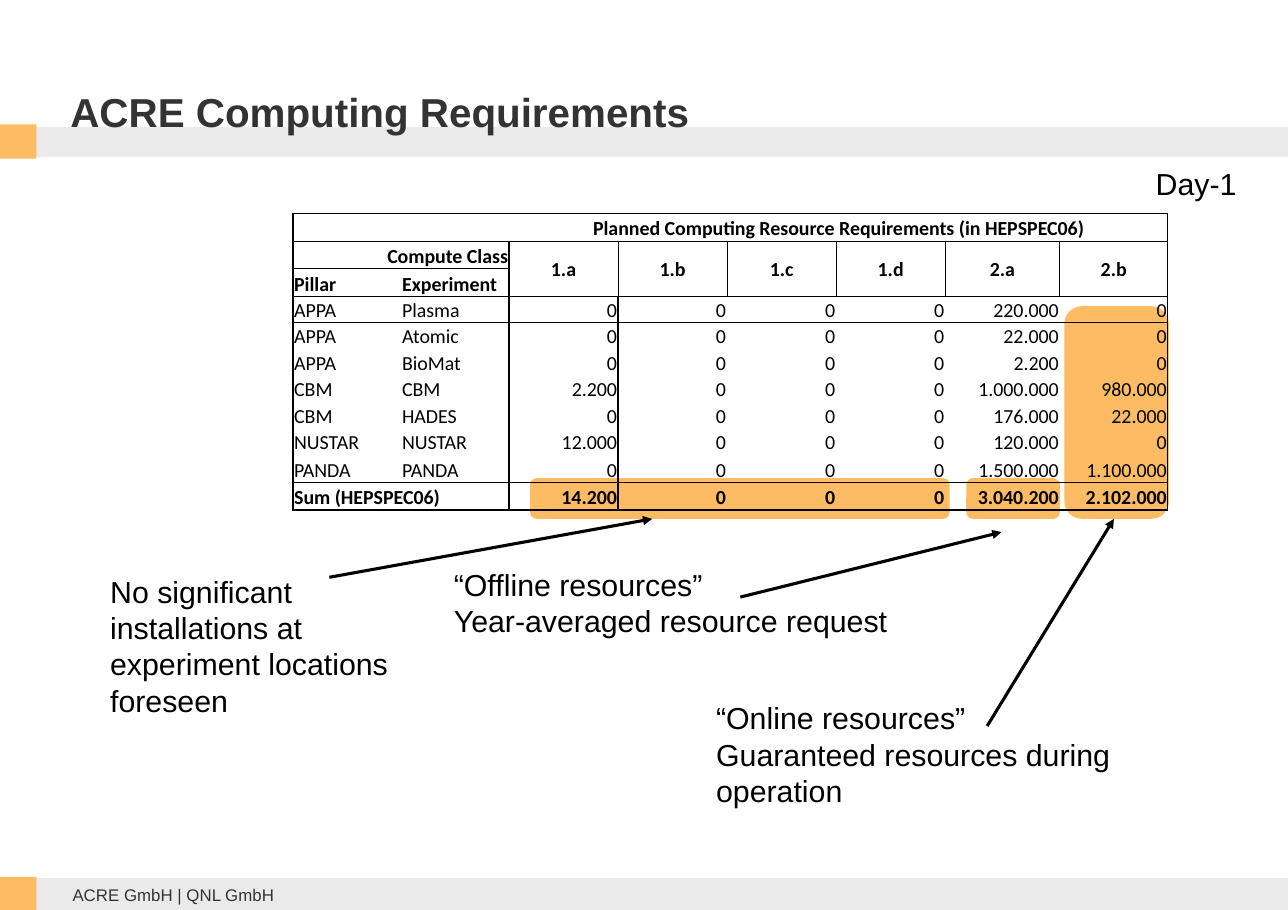
from lxml.etree import SubElement
from pptx import Presentation
from pptx.dml.color import RGBColor
from pptx.enum.shapes import MSO_CONNECTOR as Connector, MSO_SHAPE as Shape
from pptx.enum.text import MSO_ANCHOR as Anchor, PP_ALIGN as Align
from pptx.oxml.ns import qn
from pptx.util import Inches, Pt

BLACK = RGBColor(0x00, 0x00, 0x00)
CHARCOAL = RGBColor(0x33, 0x33, 0x33)
LIGHT_GRAY = RGBColor(0xEA, 0xEA, 0xEA)
ORANGE = RGBColor(0xFD, 0xBB, 0x63)
PLAIN_TABLE_STYLE = "{2D5ABB26-0587-4C30-8999-92F81FD0307C}"

TITLE = {"name": "Arial", "size": Pt(26.4), "bold": True}
FOOTER = {"name": "Arial", "size": Pt(11)}
NOTE = {"name": "Arial", "size": Pt(19.8)}
CELL = {"name": "Calibri", "size": Pt(13)}
NOTE_MARGINS = (0.11, 0.06)

COLUMN_WIDTHS = [0.98, 0.98] + [0.99] * 4 + [1.04, 0.98]
ROW_HEIGHTS = [0.25] * 3 + [0.24] * 6 + [0.25] * 2 + [0.37]
HEADER_ROWS, SUM_ROW, LABEL_COLUMNS = 3, 10, 2
REQUIREMENTS = [
    ["", "", "Planned Computing Resource Requirements (in HEPSPEC06)"] + [""] * 5,
    ["Compute Class", "", "1.a", "1.b", "1.c", "1.d", "2.a", "2.b"],
    ["Pillar", "Experiment"] + [""] * 6,
    ["APPA", "Plasma", "0", "0", "0", "0", "220.000", "0"],
    ["APPA", "Atomic", "0", "0", "0", "0", "22.000", "0"],
    ["APPA", "BioMat", "0", "0", "0", "0", "2.200", "0"],
    ["CBM", "CBM", "2.200", "0", "0", "0", "1.000.000", "980.000"],
    ["CBM", "HADES", "0", "0", "0", "0", "176.000", "22.000"],
    ["NUSTAR", "NUSTAR", "12.000", "0", "0", "0", "120.000", "0"],
    ["PANDA", "PANDA", "0", "0", "0", "0", "1.500.000", "1.100.000"],
    ["Sum (HEPSPEC06)", "", "14.200", "0", "0", "0", "3.040.200", "2.102.000"],
    [""] * 8,
]
# First and last cell of each merged range, as (row, column)
MERGES = [((0, 2), (0, 7)), ((1, 0), (1, 1)), ((10, 0), (10, 1))]
MERGES += [((1, column), (2, column)) for column in range(2, 8)]


def vertical_rule(edge, row):
    """Width in points of the rule at a column edge."""
    if row > SUM_ROW:
        return 0
    if edge in (0, len(COLUMN_WIDTHS)) or (edge == LABEL_COLUMNS and row > 0):
        return 1
    return 0.5 if edge > LABEL_COLUMNS and row in (1, 2) else 0


def horizontal_rule(edge, column):
    """Width in points of the rule at a row edge."""
    full = edge in (0, 1, HEADER_ROWS, SUM_ROW, SUM_ROW + 1)
    return 1 if full or (edge == 2 and column < LABEL_COLUMNS) else 0


def cell_alignment(row, column):
    if row < HEADER_ROWS and column >= LABEL_COLUMNS:
        return Align.CENTER
    if column >= LABEL_COLUMNS or row == 1:
        return Align.RIGHT
    return Align.LEFT


class SlideBuilder:
    def __init__(self, page):
        self.page = page

    def style(self, paragraph, formats, color):
        for span in paragraph.runs:
            for name, value in formats.items():
                setattr(span.font, name, value)
            span.font.color.rgb = color

    def block(self, left, top, width, height, color, kind=Shape.RECTANGLE):
        shape = self.page.shapes.add_shape(
            kind, Inches(left), Inches(top), Inches(width), Inches(height))
        shape.shadow.inherit = False
        shape.fill.solid()
        shape.fill.fore_color.rgb = color
        shape.line.fill.background()

    def text(self, left, top, width, height, words, formats, color=BLACK,
             anchor=Anchor.TOP, margins=(0.1, 0.05), wrap=True):
        box = self.page.shapes.add_textbox(
            Inches(left), Inches(top), Inches(width), Inches(height))
        frame = box.text_frame
        side, end = (Inches(margin) for margin in margins)
        settings = {"word_wrap": wrap, "vertical_anchor": anchor,
                    "margin_left": side, "margin_right": side,
                    "margin_top": end, "margin_bottom": end, "text": words}
        for name, value in settings.items():
            setattr(frame, name, value)
        for para in frame.paragraphs:
            self.style(para, formats, color)

    def line(self, start, finish, color, width, arrow=False):
        points = [Inches(value) for value in start + finish]
        connector = self.page.shapes.add_connector(Connector.STRAIGHT, *points)
        connector.line.color.rgb = color
        connector.line.width = Pt(width)
        if arrow:
            SubElement(connector.line._get_or_add_ln(), qn("a:tailEnd"), type="triangle")
        SubElement(connector._element.spPr, qn("a:effectLst"))

    def border(self, cell, side, width):
        rule = SubElement(cell._tc.get_or_add_tcPr(), qn(f"a:ln{side}"),
                          w=str(int(Pt(width))))
        fill = SubElement(rule, qn("a:solidFill"))
        SubElement(fill, qn("a:srgbClr"), val=str(BLACK))

    def cell(self, cell, row, column, words):
        header = row in (1, 2) and column >= LABEL_COLUMNS
        settings = {"margin_left": Inches(0.01), "margin_right": Inches(0.01),
                    "margin_top": Inches(0.01), "margin_bottom": 0,
                    "vertical_anchor": Anchor.MIDDLE if header else Anchor.BOTTOM}
        for name, value in settings.items():
            setattr(cell, name, value)
        para = cell.text_frame.paragraphs[0]
        para.alignment = cell_alignment(row, column)
        if words:
            para.add_run().text = words
            bold = row < HEADER_ROWS or row == SUM_ROW
            self.style(para, {**CELL, "bold": bold}, BLACK)
        else:
            SubElement(para._p, qn("a:endParaRPr"), sz="1300")
        rules = {"L": vertical_rule(column, row),
                 "R": vertical_rule(column + cell.span_width, row),
                 "T": horizontal_rule(row, column),
                 "B": horizontal_rule(row + cell.span_height, column)}
        for side, width in rules.items():
            if width:
                self.border(cell, side, width)
        cell.fill.background()

    def table(self, left, top, rows):
        frame = self.page.shapes.add_table(
            len(rows), len(COLUMN_WIDTHS), Inches(left), Inches(top),
            Inches(sum(COLUMN_WIDTHS)), Inches(sum(ROW_HEIGHTS)))
        table = frame.table
        table.first_row = table.horz_banding = False
        table._tbl.tblPr.find(qn("a:tableStyleId")).text = PLAIN_TABLE_STYLE
        for column, width in zip(table.columns, COLUMN_WIDTHS):
            column.width = Inches(width)
        for row, height in zip(table.rows, ROW_HEIGHTS):
            row.height = Inches(height)
        for first, last in MERGES:
            table.cell(*first).merge(table.cell(*last))
        for row, values in enumerate(rows):
            for column, words in enumerate(values):
                self.cell(table.cell(row, column), row, column, words)


def main():
    deck = Presentation()
    deck.slide_width, deck.slide_height = Inches(11.69), Inches(8.26)
    slide = SlideBuilder(deck.slides.add_slide(deck.slide_layouts[6]))

    # Title band and footer
    slide.block(0, 7.97, 11.69, 0.31, LIGHT_GRAY)
    slide.line((0, 1.29), (11.69, 1.29), LIGHT_GRAY, 20)
    slide.text(0.56, 7.98, 2.59, 0.29, "ACRE GmbH | QNL GmbH", FOOTER, CHARCOAL,
               Anchor.MIDDLE)
    for top in (1.13, 7.96):
        slide.block(0, top, 0.33, 0.31, ORANGE)

    # Highlights behind the table
    for area in ((9.66, 2.78, 0.95, 1.93), (8.77, 4.34, 0.85, 0.37),
                 (4.81, 4.34, 3.81, 0.37)):
        slide.block(*area, ORANGE, Shape.ROUNDED_RECTANGLE)

    slide.text(0.54, 0.33, 7.14, 0.95, "ACRE Computing Requirements", TITLE,
               CHARCOAL, Anchor.BOTTOM)
    slide.table(2.66, 1.94, REQUIREMENTS)

    # Notes; \v breaks a line inside a paragraph
    notes = [
        (4.01, 5.08, 4.5, 0.78, "“Offline resources”\nYear-averaged resource request"),
        (6.39, 6.29, 3.83, 1.11,
         "“Online resources”\nGuaranteed resources during\voperation"),
        (0.89, 5.14, 2.77, 1.45,
         "No significant\vinstallations at\vexperiment locations\vforeseen"),
        (10.38, 1.44, 0.96, 0.44, "Day-1"),
    ]
    for note in notes:
        slide.text(*note, NOTE, margins=NOTE_MARGINS, wrap=False)

    # Arrows from the notes to the highlights
    for start, finish in (((6.72, 5.42), (9.09, 4.83)), ((8.96, 6.59), (10.11, 4.71)),
                          ((2.99, 5.24), (5.92, 4.71))):
        slide.line(start, finish, BLACK, 2, arrow=True)

    deck.save("out.pptx")


if __name__ == "__main__":
    main()
